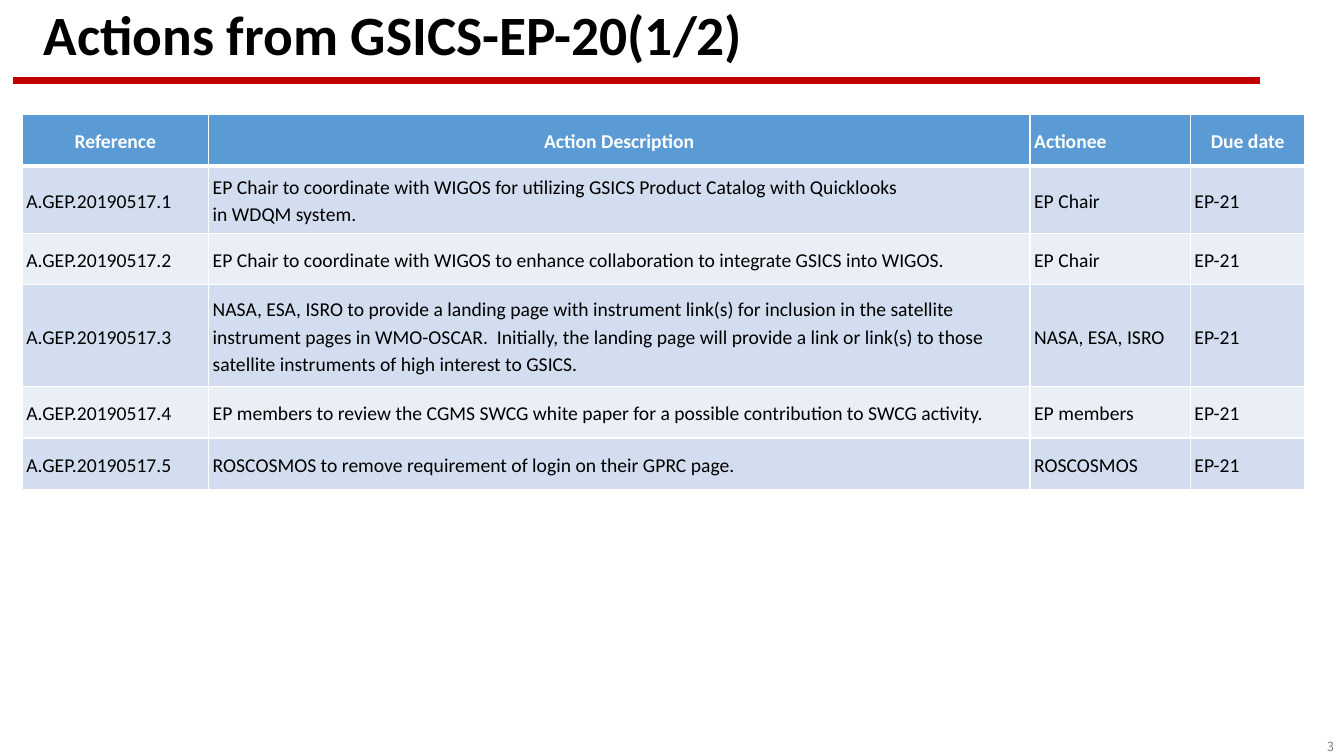
from pptx import Presentation
from pptx.dml.color import RGBColor
from pptx.enum.shapes import MSO_CONNECTOR
from pptx.enum.text import MSO_ANCHOR, MSO_AUTO_SIZE, PP_ALIGN
from pptx.util import Pt
from pptx.oxml import parse_xml
from pptx.oxml.ns import nsdecls
from lxml.etree import SubElement

TITLE = "Actions from GSICS-EP-20(1/2)"
PAGE = "3"
HEADS = ["Reference", "Action Description", "Actionee", "Due date"]
ACTS = [
    (["EP Chair to coordinate with WIGOS for utilizing GSICS Product Catalog with Quicklooks",
      "in WDQM system."], "EP Chair"),
    (["EP Chair to coordinate with WIGOS to enhance collaboration to integrate GSICS into WIGOS."],
     "EP Chair"),
    (["NASA, ESA, ISRO to provide a landing page with instrument link(s) for inclusion in the satellite",
      "instrument pages in WMO-OSCAR.  Initially, the landing page will provide a link or link(s) to those",
      "satellite instruments of high interest to GSICS."], "NASA, ESA, ISRO"),
    (["EP members to review the CGMS SWCG white paper for a possible contribution to SWCG activity."],
     "EP members"),
    (["ROSCOSMOS to remove requirement of login on their GPRC page."], "ROSCOSMOS"),
]
DUE = "EP-21"
WIDTHS = [133.2, 586.8, 114.5, 82]
HIGHS = [36.7, 48.3, 36.7, 72.8, 36.7, 36.7]
BANDS = ["EAEFF7", "D2DEEF"]


def paint(fill, tone):
    fill.solid()
    fill.fore_color.rgb = RGBColor.from_string(tone)


def write(para, text, size, tone="000000", bold=False, face="Calibri"):
    run = para.add_run()
    run.text = text
    font = run.font
    font.size, font.bold, font.name = Pt(size), bold, face
    paint(font.fill, tone)


def edge(cell, side, width):
    cell._tc.get_or_add_tcPr().append(parse_xml(
        f'<a:{side} {nsdecls("a")} w="{Pt(width)}"><a:solidFill>'
        f'<a:srgbClr val="FFFFFF"/></a:solidFill></a:{side}>'))


def fill_cell(cell, lines, row, col):
    head = row == 0
    cell.vertical_anchor = MSO_ANCHOR.MIDDLE
    cell.margin_left = cell.margin_right = Pt(3)
    cell.margin_top = cell.margin_bottom = 0
    for side, width in zip(("lnL", "lnR", "lnT", "lnB"),
                           (1, 1, 3 if row == 1 else 1, 3 if head else 1)):
        edge(cell, side, width)
    paint(cell.fill, "5B9BD5" if head else BANDS[row % 2])
    para = cell.text_frame.paragraphs[0]
    para.line_spacing = 1.15
    para.alignment = PP_ALIGN.CENTER if head and col != 2 else PP_ALIGN.LEFT
    for num, line in enumerate(lines):
        if num:
            para.add_line_break()
        write(para, line, 14, "FFFFFF" if head else "000000", head)


deck = Presentation()
deck.slide_width, deck.slide_height = Pt(960), Pt(540)
slide = deck.slides.add_slide(deck.slide_layouts[5])
shapes = slide.shapes

rule = shapes.add_connector(MSO_CONNECTOR.STRAIGHT, Pt(9.4), Pt(57.6), Pt(900), Pt(57.6))
rule.line.width = Pt(4.5)
paint(rule.line.fill, "C00000")
SubElement(rule._element.spPr, "{http://schemas.openxmlformats.org/drawingml/2006/main}effectLst")

title = shapes.title
title.left, title.top, title.width, title.height = Pt(24), Pt(5.5), Pt(828), Pt(43.2)
frame = title.text_frame
frame.auto_size = MSO_AUTO_SIZE.NONE
frame.vertical_anchor = MSO_ANCHOR.MIDDLE
para = frame.paragraphs[0]
para.alignment = PP_ALIGN.LEFT
para.line_spacing = 0.9
write(para, TITLE, 39.6, bold=True)

rows = [[[head] for head in HEADS]]
for num, (lines, who) in enumerate(ACTS, 1):
    rows.append([[f"A.GEP.20190517.{num}"], lines, [who], [DUE]])
table = shapes.add_table(len(rows), len(HEADS), Pt(15.8), Pt(81.7),
                         Pt(sum(WIDTHS)), Pt(sum(HIGHS))).table
for col, width in zip(table.columns, WIDTHS):
    col.width = Pt(width)
for row, high in zip(table.rows, HIGHS):
    row.height = Pt(high)
for r, row in enumerate(rows):
    for c, lines in enumerate(row):
        fill_cell(table.cell(r, c), lines, r, c)

page = shapes.add_textbox(Pt(878), Pt(524), Pt(82), Pt(18)).text_frame
page.word_wrap = True
para = page.paragraphs[0]
para.alignment = PP_ALIGN.RIGHT
write(para, PAGE, 9, "808080", face="Noto Sans CJK KR")

deck.save("out.pptx")
